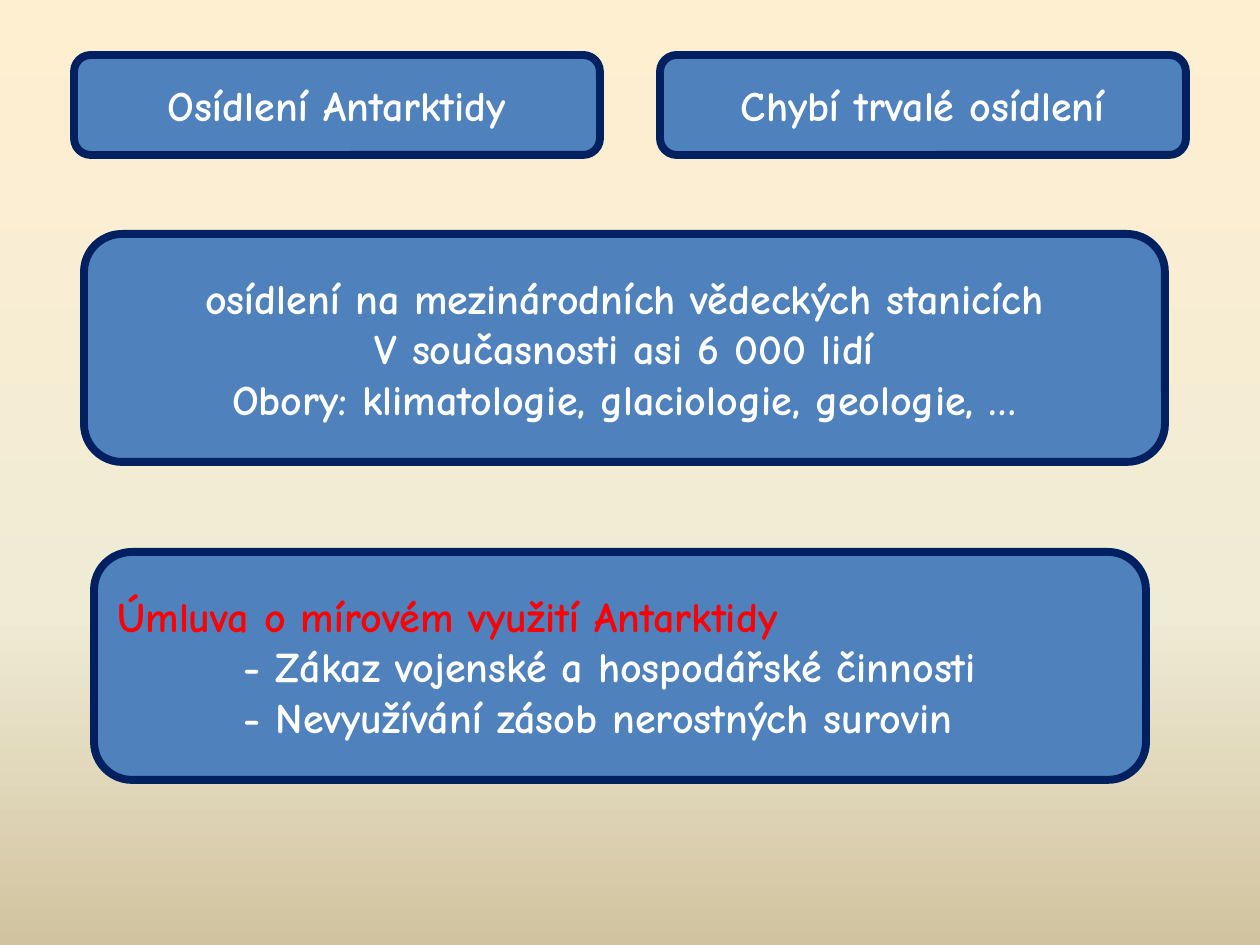
from copy import deepcopy

from pptx import Presentation
from pptx import util as u
from pptx.dml.color import RGBColor
from pptx.enum import shapes, text
from pptx.oxml.ns import qn

PX = 914400 // 126
FONT = "Comic Neue"
COLORS = {"fill": "4F81BD", "edge": "002060", "text": "FFFFFF", "alert": "FF0000"}
SKY = [(0, "FFEFD1"), (0.65, "F0EBD5"), (1, "D1C39F")]
INDENT = 126

CENTER = {"align": text.PP_ALIGN.CENTER}
LEFT = {"align": text.PP_ALIGN.LEFT}
ITEM = {**LEFT, "indent": INDENT}

# Each box: left, top, width, height in px, then its lines with their format
BOXES = [
    ((74, 55, 526, 100), [("Osídlení Antarktidy", CENTER)]),
    ((660, 55, 526, 100), [("Chybí trvalé osídlení", CENTER)]),
    ((84, 234, 1081, 228), [
        ("osídlení na mezinárodních vědeckých stanicích", CENTER),
        ("V současnosti asi 6 000 lidí", CENTER),
        ("Obory: klimatologie, glaciologie, geologie, …", CENTER),
    ]),
    ((94, 552, 1052, 228), [
        ("Úmluva o mírovém využití Antarktidy", {**LEFT, "color": "alert"}),
        ("- Zákaz vojenské a hospodářské činnosti", ITEM),
        ("- Nevyužívání zásob nerostných surovin", ITEM),
    ]),
]


def rgb(name):
    return RGBColor.from_string(COLORS[name])


def write(para, words, align, color="text", indent=0):
    para.alignment = align
    if indent:
        para._p.get_or_add_pPr().set("marL", str(indent * PX))
    run = para.add_run()
    run.text = words
    run.font.name = FONT
    run.font.size = u.Pt(24)
    run.font.bold = True
    run.font.color.rgb = rgb(color)


def add_box(slide, place, lines):
    box = slide.shapes.add_shape(
        shapes.MSO_SHAPE.ROUNDED_RECTANGLE, *(n * PX for n in place))
    box.shadow.inherit = False
    box.fill.solid()
    box.fill.fore_color.rgb = rgb("fill")
    box.line.color.rgb = rgb("edge")
    box.line.width = u.Pt(4.5)
    frame = box.text_frame
    frame.word_wrap = True
    frame.vertical_anchor = text.MSO_ANCHOR.MIDDLE
    for i, (words, style) in enumerate(lines):
        para = frame.add_paragraph() if i else frame.paragraphs[0]
        write(para, words, **style)


def paint_sky(slide):
    """Fill the background with the vertical gradient."""
    fill = slide.background.fill
    fill.gradient()
    fill.gradient_angle = 270
    stops = slide.element.find(".//" + qn("a:gsLst"))
    stops.append(deepcopy(stops[-1]))
    for stop, (pos, color) in zip(fill.gradient_stops, SKY):
        stop.position = pos
        stop.color.rgb = RGBColor.from_string(color)


def main():
    deck = Presentation()
    deck.slide_width, deck.slide_height = u.Inches(10), u.Inches(7.5)
    slide = deck.slides.add_slide(deck.slide_layouts[6])
    paint_sky(slide)
    for place, lines in BOXES:
        add_box(slide, place, lines)
    deck.save("out.pptx")


if __name__ == "__main__":
    main()
